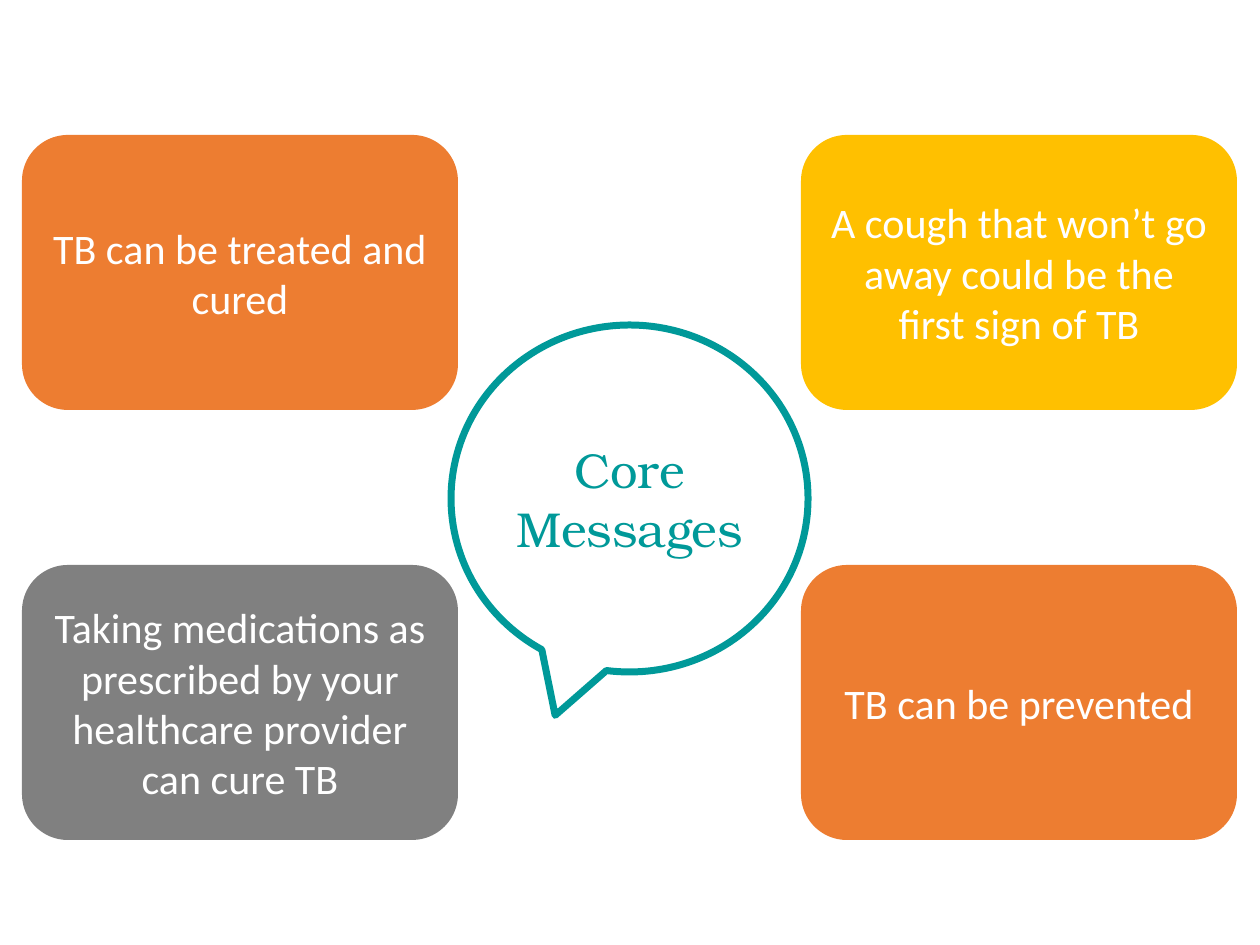
import pptx
import pptx.util
from pptx.dml.color import RGBColor
from pptx.enum.shapes import MSO_SHAPE
from pptx.enum.text import MSO_ANCHOR, PP_ALIGN

PX = 914400 / 126
ORANGE = RGBColor(0xED, 0x7D, 0x31)
GOLD = RGBColor(0xFF, 0xC0, 0x00)
GRAY = RGBColor(0x80, 0x80, 0x80)
TEAL = RGBColor(0x00, 0x99, 0x99)
WHITE = RGBColor(0xFF, 0xFF, 0xFF)


def px(n):
    return pptx.util.Emu(round(n * PX))


def add_text_shape(s, kind, box, text, font, size, color):
    sp = s.shapes.add_shape(kind, *[px(n) for n in box])
    sp.shadow.inherit = False
    tf = sp.text_frame
    tf.word_wrap = True
    tf.vertical_anchor = MSO_ANCHOR.MIDDLE
    p = tf.paragraphs[0]
    p.text = text
    p.alignment = PP_ALIGN.CENTER
    p.font.name = font
    p.font.size = pptx.util.Pt(size)
    p.font.color.rgb = color
    return sp


prs = pptx.Presentation()
prs.slide_width = px(1260)
prs.slide_height = px(945)
s = prs.slides.add_slide(prs.slide_layouts[6])

LEFT, RIGHT = 22, 801
TOP, BOTTOM = 135, 565
messages = [
    (LEFT, TOP, ORANGE, "TB can be treated and cured"),
    (RIGHT, TOP, GOLD, "A cough that won’t go away could be the first sign of TB"),
    (RIGHT, BOTTOM, ORANGE, "TB can be prevented"),
    (LEFT, BOTTOM, GRAY,
     "Taking medications as prescribed by your healthcare provider can cure TB"),
]
for x, y, color, text in messages:
    sp = add_text_shape(s, MSO_SHAPE.ROUNDED_RECTANGLE, (x, y, 436, 275),
                        text, "Calibri", 24, WHITE)
    sp.fill.solid()
    sp.fill.fore_color.rgb = color
    sp.line.fill.background()

callout = add_text_shape(s, MSO_SHAPE.OVAL_CALLOUT, (451, 325, 357, 347),
                         "Core Messages", "TeX Gyre Bonum", 28, TEAL)
callout.fill.background()
callout.line.color.rgb = TEAL
callout.line.width = pptx.util.Pt(4)

prs.save("out.pptx")
